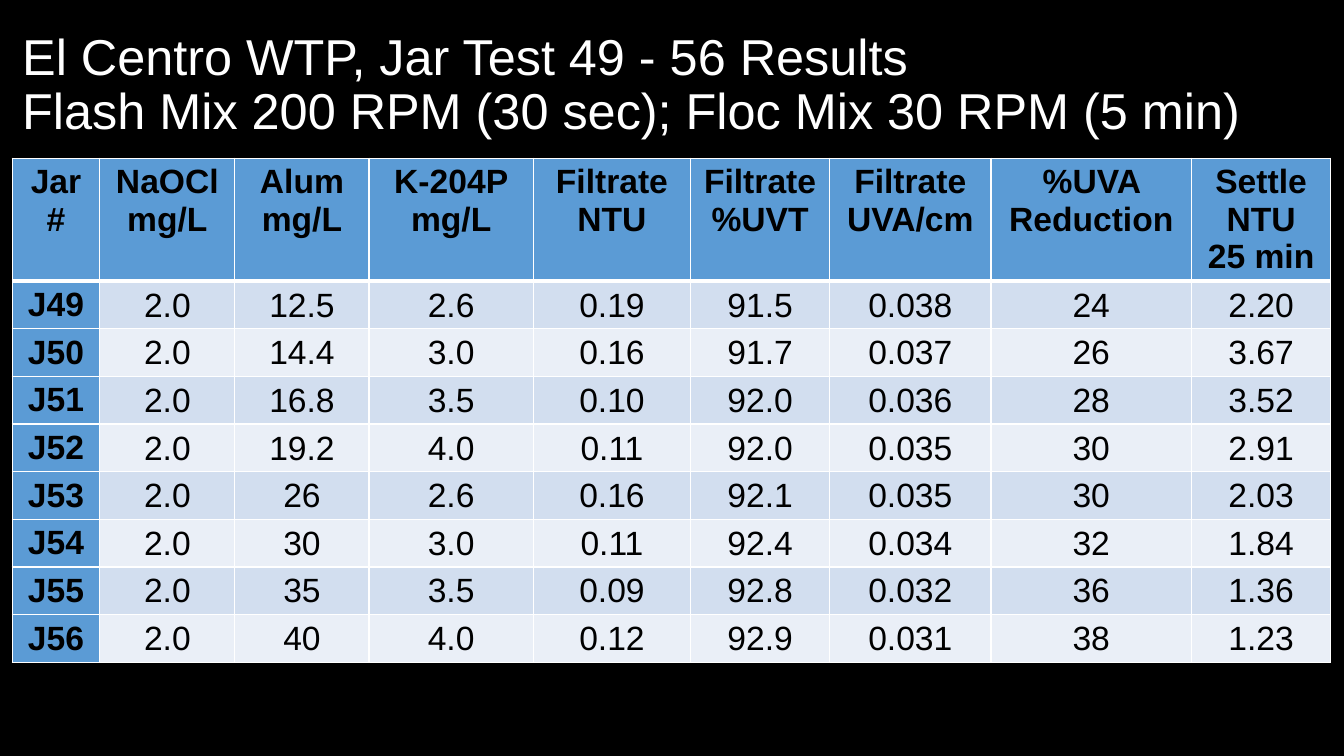
import dataclasses

import pptx
import pptx.dml.color
import pptx.enum.text
import pptx.oxml.ns
import pptx.slide
import pptx.table
import pptx.util
from lxml import etree

SLIDE_WIDTH = pptx.util.Inches(13.33)
SLIDE_HEIGHT = pptx.util.Inches(7.5)
FONT = "Arial"
BLACK, WHITE = "000000", "FFFFFF"
HEADER_BLUE, BANDS = "5B9BD5", ("D2DEEF", "EAEFF7")
MARGIN = 0.9  # percent of the slide width
HEADER_HEIGHT, JAR_HEIGHT = 16.27, 6.3  # percent of the slide height

TITLE_LINES = (
    "El Centro WTP, Jar Test 49 - 56 Results",
    "Flash Mix 200 RPM (30 sec); Floc Mix 30 RPM (5 min)",
)


@dataclasses.dataclass(frozen=True)
class Measure:
    heading: tuple[str, ...]
    width: float  # percent of the slide width
    values: tuple[str, ...]


MEASURES = (
    Measure(("Jar#",), 6.53, tuple(f"J{jar}" for jar in range(49, 57))),
    Measure(("NaOCl", "mg/L"), 10.05, ("2.0",) * 8),
    Measure(("Alum", "mg/L"), 9.98,
            ("12.5", "14.4", "16.8", "19.2", "26", "30", "35", "40")),
    Measure(("K-204P", "mg/L"), 12.23, ("2.6", "3.0", "3.5", "4.0") * 2),
    Measure(("Filtrate", "NTU"), 11.7,
            ("0.19", "0.16", "0.10", "0.11", "0.16", "0.11", "0.09", "0.12")),
    Measure(("Filtrate", "%UVT"), 10.35,
            ("91.5", "91.7", "92.0", "92.0", "92.1", "92.4", "92.8", "92.9")),
    Measure(("Filtrate", "UVA/cm"), 12,
            ("0.038", "0.037", "0.036", "0.035", "0.035", "0.034", "0.032", "0.031")),
    Measure(("%UVA Reduction",), 14.93,
            ("24", "26", "28", "30", "30", "32", "36", "38")),
    Measure(("Settle", "NTU", "25 min"), 10.35,
            ("2.20", "3.67", "3.52", "2.91", "2.03", "1.84", "1.36", "1.23")),
)


def across(percent: float) -> int:
    return round(SLIDE_WIDTH * percent / 100)


def down(percent: float) -> int:
    return round(SLIDE_HEIGHT * percent / 100)


def color(value: str) -> pptx.dml.color.RGBColor:
    return pptx.dml.color.RGBColor.from_string(value)


def add_run(paragraph, text: str, size: float, shade: str, bold: bool = False) -> None:
    run = paragraph.add_run()
    run.text = text
    run.font.name = FONT
    run.font.size = pptx.util.Pt(size)
    run.font.bold = bold
    run.font.color.rgb = color(shade)


def add_borders(cell: pptx.table._Cell, top: float, bottom: float) -> None:
    properties = cell._tc.get_or_add_tcPr()
    qn = pptx.oxml.ns.qn
    for side, points in (("L", 1), ("R", 1), ("T", top), ("B", bottom)):
        line = etree.SubElement(properties, qn(f"a:ln{side}"), w=str(pptx.util.Pt(points)))
        fill = etree.SubElement(line, qn("a:solidFill"))
        etree.SubElement(fill, qn("a:srgbClr"), val=WHITE)


def fill_cell(cell: pptx.table._Cell, lines: tuple[str, ...], row: int, column: int) -> None:
    is_heading = row == 0 or column == 0
    add_borders(cell, top=3 if row == 1 else 1, bottom=3 if row == 0 else 1)
    cell.fill.solid()
    cell.fill.fore_color.rgb = color(HEADER_BLUE if is_heading else BANDS[(row - 1) % 2])
    if not is_heading:
        cell.vertical_anchor = pptx.enum.text.MSO_ANCHOR.MIDDLE
        cell.margin_left = cell.margin_right = cell.margin_top = pptx.util.Inches(0.01)
        cell.margin_bottom = 0
    for index, text in enumerate(lines):
        frame = cell.text_frame
        paragraph = frame.add_paragraph() if index else frame.paragraphs[0]
        paragraph.alignment = pptx.enum.text.PP_ALIGN.CENTER
        add_run(paragraph, text, 24, BLACK, is_heading)


def draw_title(slide: pptx.slide.Slide) -> None:
    title = slide.shapes.title
    title.left, title.top = across(MARGIN), down(1.73)
    title.width, title.height = across(97.75), down(19.33)
    frame = title.text_frame
    frame.word_wrap = True
    frame.auto_size = pptx.enum.text.MSO_AUTO_SIZE.NONE
    frame.vertical_anchor = pptx.enum.text.MSO_ANCHOR.MIDDLE
    heading = frame.paragraphs[0]
    heading.alignment = pptx.enum.text.PP_ALIGN.LEFT
    heading.line_spacing = 0.9
    for index, text in enumerate(TITLE_LINES):
        if index:
            heading.add_line_break()
        add_run(heading, text, 36, WHITE)


def draw_results(slide: pptx.slide.Slide) -> None:
    heights = [HEADER_HEIGHT] + [JAR_HEIGHT] * len(MEASURES[0].values)
    results = slide.shapes.add_table(
        len(heights), len(MEASURES), across(MARGIN), down(20.93),
        across(sum(measure.width for measure in MEASURES)), down(sum(heights)),
    ).table
    for row, height in enumerate(heights):
        results.rows[row].height = down(height)
    for column, measure in enumerate(MEASURES):
        results.columns[column].width = across(measure.width)
        entries = (measure.heading, *((value,) for value in measure.values))
        for row, lines in enumerate(entries):
            fill_cell(results.cell(row, column), lines, row, column)


def main() -> None:
    presentation = pptx.Presentation()
    presentation.slide_width = SLIDE_WIDTH
    presentation.slide_height = SLIDE_HEIGHT
    slide = presentation.slides.add_slide(presentation.slide_layouts[5])

    # Black background
    slide.background.fill.solid()
    slide.background.fill.fore_color.rgb = color(BLACK)

    # Test conditions and jar results
    draw_title(slide)
    draw_results(slide)
    presentation.save("out.pptx")


if __name__ == "__main__":
    main()
